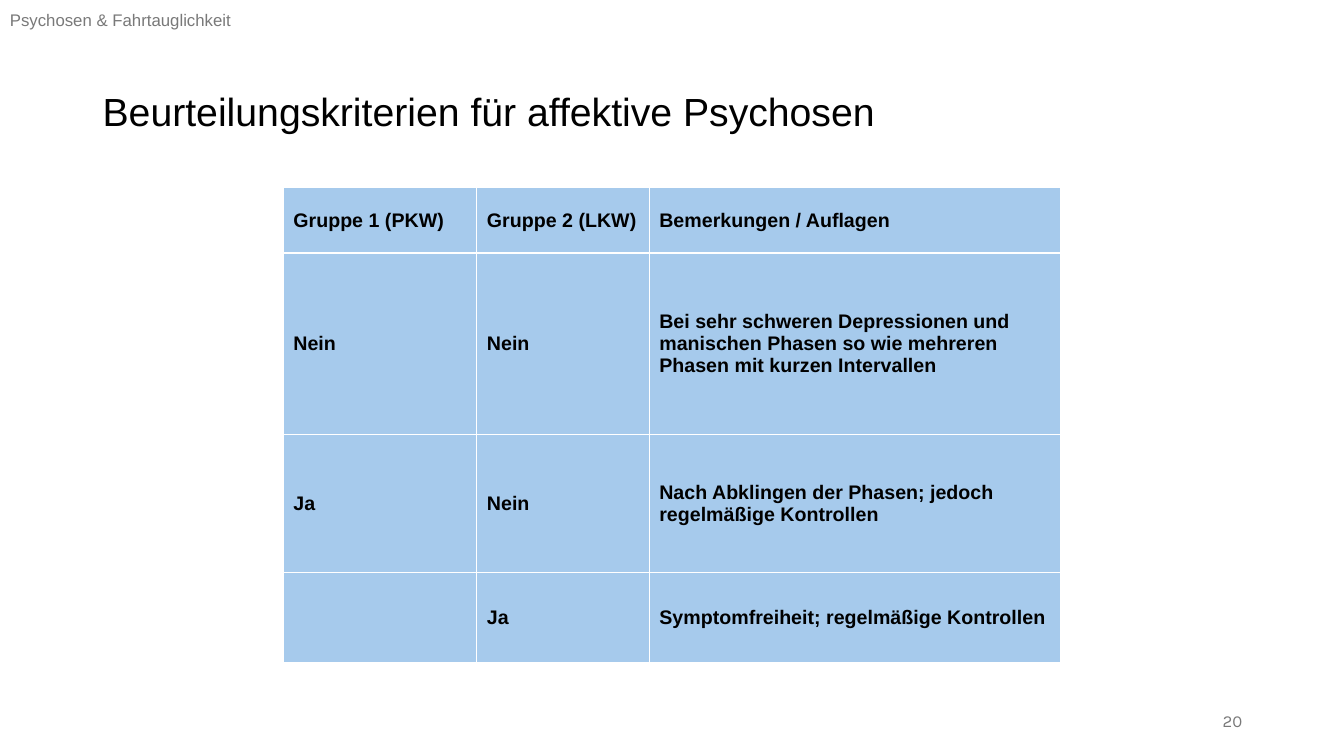
from dataclasses import dataclass

from lxml.etree import SubElement
from pptx import Presentation
from pptx.dml.color import RGBColor
from pptx.enum.text import MSO_ANCHOR, PP_ALIGN
from pptx.oxml.ns import qn
from pptx.slide import Slide
from pptx.table import _Cell
from pptx.text.text import _Paragraph
from pptx.util import Inches, Pt

COLORS = {"text": "000000", "muted": "797979", "cell": "A6CAEC", "border": "FFFFFF"}


@dataclass
class TextStyle:
    size: float
    color: str = "text"
    font: str = "Arial"
    bold: bool = False


@dataclass
class Label:
    text: str
    left: float
    top: float
    width: float
    height: float
    style: TextStyle
    align: PP_ALIGN = PP_ALIGN.LEFT
    line_spacing: float = 1.0


LABELS = [
    Label("20", 9.42, 6.95, 3, 0.4, TextStyle(12, "muted", "Karla"), PP_ALIGN.RIGHT),
    Label("Beurteilungskriterien für affektive Psychosen", 0.92, 0.4, 11.5, 1.45,
          TextStyle(28), line_spacing=0.9),
    Label("Psychosen & Fahrtauglichkeit", 0, 0, 3.06, 0.4, TextStyle(12, "muted")),
]

CELL_STYLE = TextStyle(14, bold=True)
COLUMN_WIDTHS = [1.92, 1.71, 4.08]
ROW_HEIGHTS = [0.65, 1.8, 1.37, 0.89]
CRITERIA = [
    ["Gruppe 1 (PKW)", "Gruppe 2 (LKW)", "Bemerkungen / Auflagen"],
    ["Nein", "Nein", "Bei sehr schweren Depressionen und manischen Phasen so wie "
     "mehreren Phasen mit kurzen Intervallen"],
    ["Ja", "Nein", "Nach Abklingen der Phasen; jedoch regelmäßige Kontrollen"],
    ["", "Ja", "Symptomfreiheit; regelmäßige Kontrollen"],
]


def write_text(para: _Paragraph, text: str, style: TextStyle) -> None:
    if not text:
        return
    span = para.add_run()
    span.text = text
    font_format = {"name": style.font, "size": Pt(style.size), "bold": style.bold}
    for name, value in font_format.items():
        setattr(span.font, name, value)
    span.font.color.rgb = RGBColor.from_string(COLORS[style.color])


def add_label(page: Slide, label: Label) -> None:
    lengths = (label.left, label.top, label.width, label.height)
    box = page.shapes.add_textbox(*(Inches(length) for length in lengths))
    box.text_frame.word_wrap = True
    box.text_frame.vertical_anchor = MSO_ANCHOR.MIDDLE
    para = box.text_frame.paragraphs[0]
    para_format = {"alignment": label.align, "line_spacing": label.line_spacing}
    for name, value in para_format.items():
        setattr(para, name, value)
    write_text(para, label.text, label.style)


def add_borders(cell: _Cell) -> None:
    """Draw all four cell edges; call before the fill, which must follow them in the XML."""
    properties = cell._tc.get_or_add_tcPr()
    for edge in ("a:lnL", "a:lnR", "a:lnT", "a:lnB"):
        line = SubElement(properties, qn(edge), w=str(Pt(1)))
        fill = SubElement(line, qn("a:solidFill"))
        SubElement(fill, qn("a:srgbClr"), val=COLORS["border"])


def add_criteria_table(page: Slide) -> None:
    table = page.shapes.add_table(
        len(ROW_HEIGHTS), len(COLUMN_WIDTHS), Inches(2.81), Inches(1.86),
        Inches(sum(COLUMN_WIDTHS)), Inches(sum(ROW_HEIGHTS))).table
    for column, width in zip(table.columns, COLUMN_WIDTHS):
        column.width = Inches(width)
    for row, height, texts in zip(table.rows, ROW_HEIGHTS, CRITERIA):
        row.height = Inches(height)
        for cell, text in zip(row.cells, texts):
            add_borders(cell)
            cell.fill.solid()
            cell.fill.fore_color.rgb = RGBColor.from_string(COLORS["cell"])
            cell.vertical_anchor = MSO_ANCHOR.MIDDLE
            write_text(cell.text_frame.paragraphs[0], text, CELL_STYLE)


def main() -> None:
    deck = Presentation()
    deck.slide_width, deck.slide_height = Inches(13.33), Inches(7.5)
    page = deck.slides.add_slide(deck.slide_layouts[6])
    add_criteria_table(page)
    for label in LABELS:
        add_label(page, label)
    deck.save("out.pptx")


if __name__ == "__main__":
    main()
